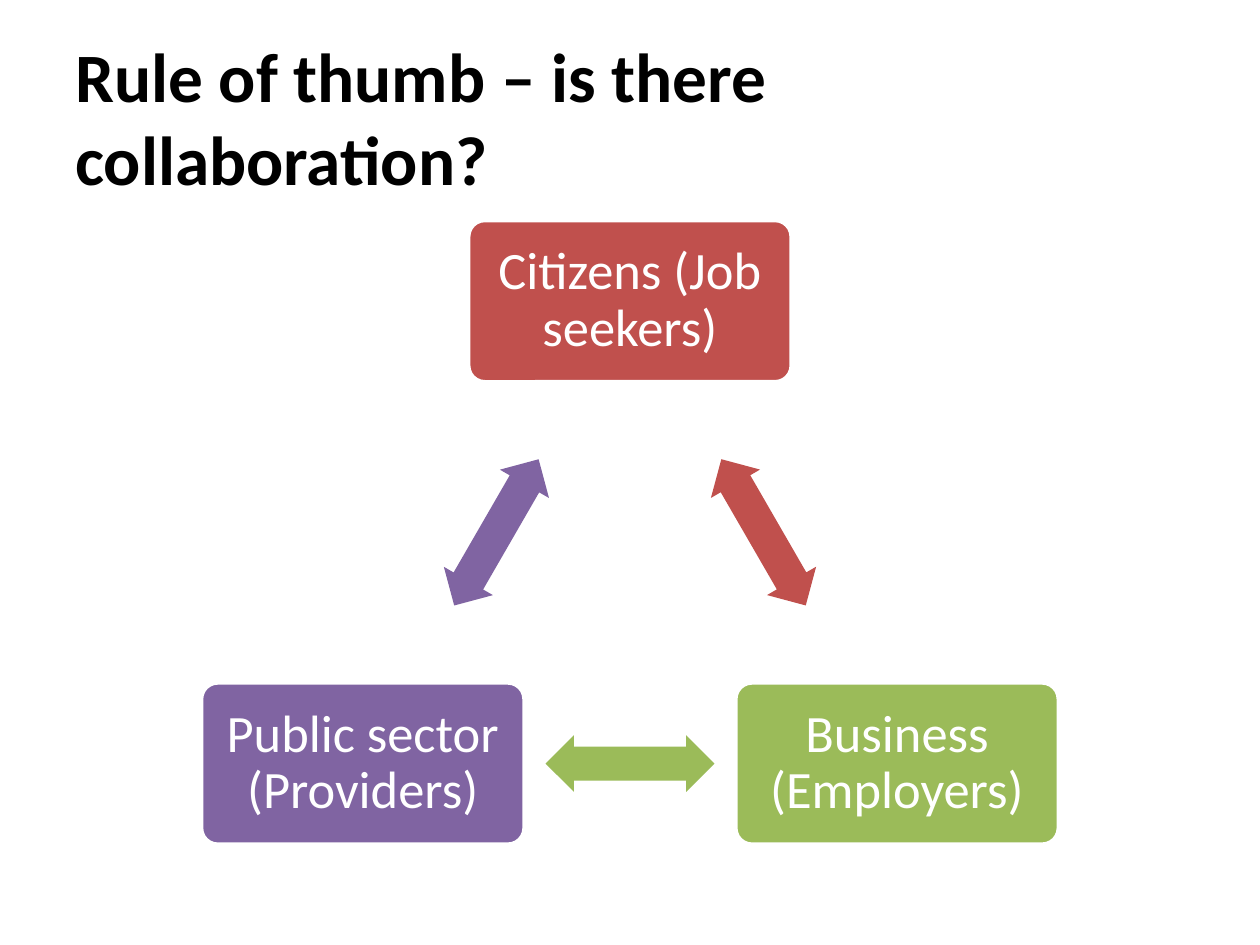
from math import atan2, degrees

from pptx import Presentation
from pptx.dml.color import RGBColor
from pptx.enum.shapes import MSO_SHAPE as Shape
from pptx.enum.text import MSO_ANCHOR as Anchor, PP_ALIGN as Align
from pptx.util import Inches, Pt

COLORS = {
    "text": "000000",
    "white": "FFFFFF",
    "citizens": "C0504D",
    "business": "9BBB59",
    "public": "8064A2",
}
BOX_WIDTH, BOX_HEIGHT = 2.56, 1.28
ARROW_WIDTH, ARROW_HEIGHT = 1.34, 0.45

# Name of colour, text, centre of the box in inches, clockwise from the top
PARTNERS = [
    ("citizens", "Citizens (Job seekers)", (5, 2.39)),
    ("business", "Business (Employers)", (7.12, 6.06)),
    ("public", "Public sector (Providers)", (2.88, 6.06)),
]


def rgb(name):
    return RGBColor.from_string(COLORS[name])


def apply_format(target, values):
    for name, value in values.items():
        setattr(target, name, value)


class SlideBuilder:
    font_name = "Calibri"

    def __init__(self, slide):
        self.slide = slide

    def set_text(self, shape, text, color, frame_format, paragraph_format, font_format):
        frame = shape.text_frame
        apply_format(frame, {"word_wrap": True, "vertical_anchor": Anchor.MIDDLE,
                             **frame_format})
        paragraph = frame.paragraphs[0]
        paragraph.text = text
        apply_format(paragraph, paragraph_format)
        apply_format(paragraph.font, {"name": self.font_name, **font_format})
        paragraph.font.color.rgb = rgb(color)

    def title(self, text, left, top, width, height):
        box = self.slide.shapes.add_textbox(
            Inches(left), Inches(top), Inches(width), Inches(height))
        self.set_text(box, text, "text", {}, {"alignment": Align.LEFT},
                      {"size": Pt(39.6), "bold": True})

    def centred_shape(self, kind, center, width, height, color, adjustments):
        x, y = center
        shape = self.slide.shapes.add_shape(
            kind, Inches(x - width / 2), Inches(y - height / 2),
            Inches(width), Inches(height))
        shape.shadow.inherit = False
        shape.fill.solid()
        shape.fill.fore_color.rgb = rgb(color)
        for index, value in enumerate(adjustments):
            shape.adjustments[index] = value
        return shape

    def partner_box(self, color, text, center):
        box = self.centred_shape(
            Shape.ROUNDED_RECTANGLE, center, BOX_WIDTH, BOX_HEIGHT, color, [0.1])
        box.line.color.rgb = rgb("white")
        box.line.width = Pt(2)
        sides = ("left", "right", "top", "bottom")
        margins = {f"margin_{side}": Inches(0.12) for side in sides}
        self.set_text(box, text, "white", margins,
                      {"alignment": Align.CENTER, "line_spacing": 0.9}, {"size": Pt(30)})

    def link_arrow(self, color, start, end):
        """Put a double arrow halfway between two centres, turned along their line."""
        (x1, y1), (x2, y2) = start, end
        arrow = self.centred_shape(
            Shape.LEFT_RIGHT_ARROW, ((x1 + x2) / 2, (y1 + y2) / 2),
            ARROW_WIDTH, ARROW_HEIGHT, color, [0.6, 0.5])
        arrow.line.fill.background()
        arrow.rotation = round(degrees(atan2(y2 - y1, x2 - x1))) % 360


def main():
    presentation = Presentation()
    presentation.slide_width = Inches(10)
    presentation.slide_height = Inches(7.5)
    builder = SlideBuilder(presentation.slides.add_slide(presentation.slide_layouts[6]))

    builder.title("Rule of thumb – is there collaboration?", 0.5, 0.3, 9, 1.25)
    next_partners = PARTNERS[1:] + PARTNERS[:1]
    for (color, text, center), (_, _, next_center) in zip(PARTNERS, next_partners):
        builder.partner_box(color, text, center)
        builder.link_arrow(color, center, next_center)

    presentation.save("out.pptx")


if __name__ == "__main__":
    main()
